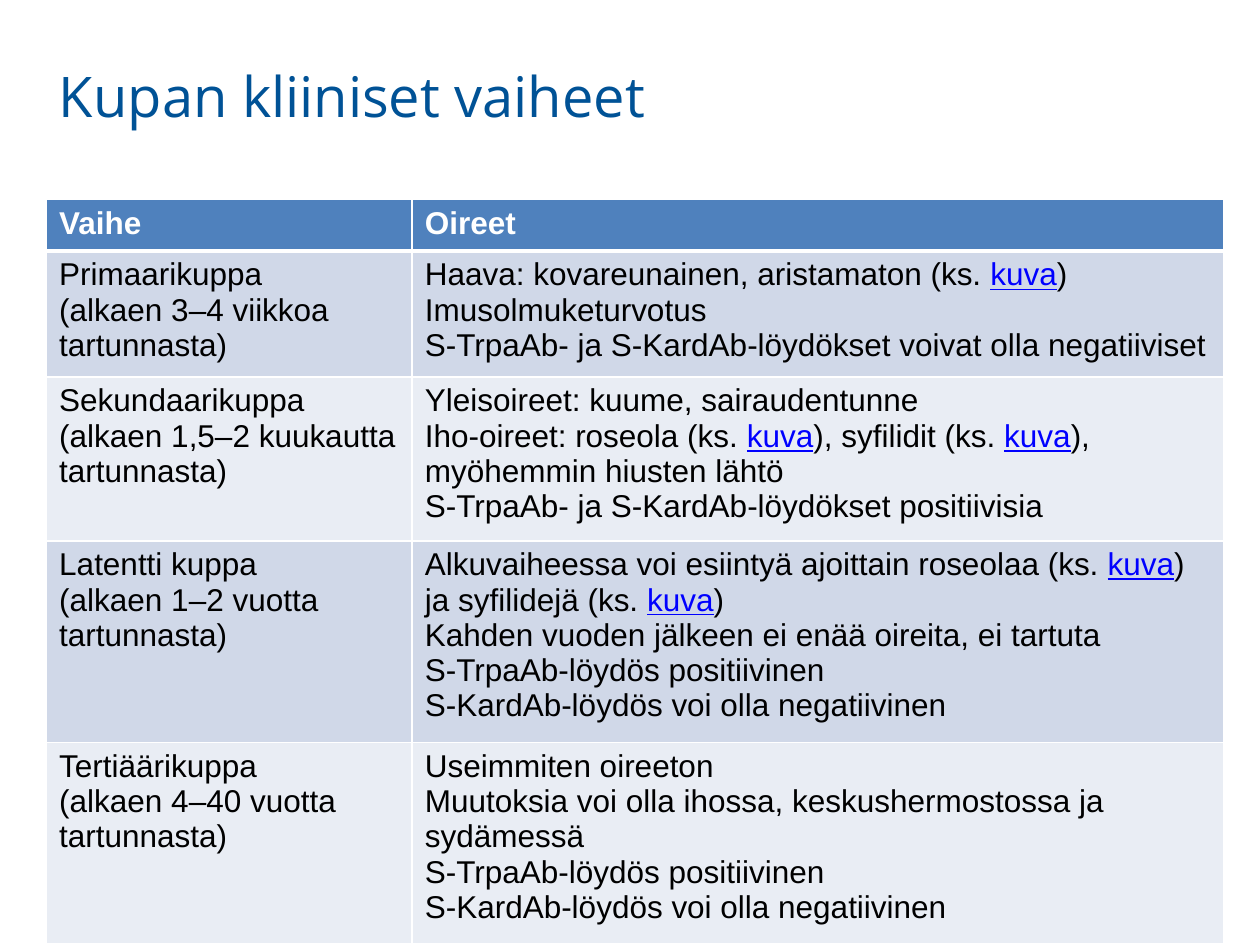
from dataclasses import dataclass

from lxml import etree
from pptx import Presentation
from pptx.dml.color import RGBColor
from pptx.enum.text import MSO_ANCHOR
from pptx.oxml.ns import qn
from pptx.table import _Cell
from pptx.text.text import TextFrame
from pptx.util import Cm, Pt

TOP = MSO_ANCHOR.TOP
LINK_MARK = "|"


@dataclass(frozen=True)
class Theme:
    title_font: str = "Open Sans"
    body_font: str = "Arial"
    title_size: int = 32
    body_size: int = 18
    title: str = "005296"
    header: str = "4F81BD"
    bands: tuple[str, str] = ("D0D8E8", "E9EDF4")
    text: str = "000000"
    link: str = "0000FF"
    white: str = "FFFFFF"
    border: int = 1
    header_border: int = 3


@dataclass(frozen=True)
class Stage:
    name: tuple[str, ...]
    symptoms: tuple[str, ...]
    lines: int


THEME = Theme()
LEFT = Cm(0.94)
COLUMN_WIDTHS = (Cm(7.37), Cm(16.36))
HEADER_HEIGHT = Cm(1.04)
LINE_HEIGHT = Cm(0.71)
CELL_PADDING = Cm(0.25)

HEADINGS = ("Vaihe", "Oireet")
STAGES = (
    Stage(
        ("Primaarikuppa\n(alkaen 3–4 viikkoa tartunnasta)",),
        (
            "Haava: kovareunainen, aristamaton (ks. |kuva|) Imusolmuketurvotus",
            "S-TrpaAb- ja S-KardAb-löydökset voivat olla negatiiviset",
        ),
        3,
    ),
    Stage(
        ("Sekundaarikuppa\n(alkaen 1,5–2 kuukautta tartunnasta)",),
        (
            "Yleisoireet: kuume, sairaudentunne",
            "Iho-oireet: roseola (ks. |kuva|), syfilidit (ks. |kuva|), myöhemmin hiusten lähtö",
            "S-TrpaAb- ja S-KardAb-löydökset positiivisia",
        ),
        4,
    ),
    Stage(
        ("Latentti kuppa", "(alkaen 1–2 vuotta tartunnasta)"),
        (
            "Alkuvaiheessa voi esiintyä ajoittain roseolaa (ks. |kuva|) ja syfilidejä (ks. |kuva|)",
            "Kahden vuoden jälkeen ei enää oireita, ei tartuta",
            "S-TrpaAb-löydös positiivinen",
            "S-KardAb-löydös voi olla negatiivinen",
        ),
        5,
    ),
    Stage(
        ("Tertiäärikuppa", "(alkaen 4–40 vuotta tartunnasta)"),
        (
            "Useimmiten oireeton",
            "Muutoksia voi olla ihossa, keskushermostossa ja sydämessä",
            "S-TrpaAb-löydös positiivinen",
            "S-KardAb-löydös voi olla negatiivinen",
        ),
        5,
    ),
)


def write_text(
    frame: TextFrame,
    paragraphs: tuple[str, ...],
    *,
    font: str = THEME.body_font,
    size: int = THEME.body_size,
    color: str = THEME.text,
    bold: bool = False,
) -> None:
    frame.word_wrap = True
    for number, text in enumerate(paragraphs):
        paragraph = frame.add_paragraph() if number else frame.paragraphs[0]
        for part_number, part in enumerate(text.split(LINK_MARK)):
            is_link = part_number % 2 == 1
            for line_number, line in enumerate(part.split("\n")):
                if line_number:
                    paragraph.add_line_break()
                run = paragraph.add_run()
                run.text = line
                run.font.name = font
                run.font.size = Pt(size)
                run.font.bold = bold
                run.font.underline = is_link
                run.font.color.rgb = RGBColor.from_string(THEME.link if is_link else color)


def format_cell(cell: _Cell, fill: str, top: int, bottom: int) -> None:
    cell.fill.solid()
    cell.fill.fore_color.rgb = RGBColor.from_string(fill)
    properties = cell._tc.get_or_add_tcPr()
    widths = {"a:lnL": THEME.border, "a:lnR": THEME.border, "a:lnT": top, "a:lnB": bottom}
    for position, (tag, width) in enumerate(widths.items()):
        line = etree.Element(qn(tag), w=str(Pt(width)))
        solid = etree.SubElement(line, qn("a:solidFill"))
        etree.SubElement(solid, qn("a:srgbClr"), val=THEME.white)
        properties.insert(position, line)


def add_title(slide, text: str) -> None:
    box = slide.shapes.add_textbox(LEFT, Cm(1.12), Cm(22.91), Cm(3.2))
    box.text_frame.vertical_anchor = TOP
    write_text(
        box.text_frame, (text,), font=THEME.title_font, size=THEME.title_size, color=THEME.title
    )


def add_stage_table(slide, stages: tuple[Stage, ...]) -> None:
    heights = [HEADER_HEIGHT] + [stage.lines * LINE_HEIGHT + CELL_PADDING for stage in stages]
    table = slide.shapes.add_table(
        len(heights), len(HEADINGS), LEFT, Cm(4.02), sum(COLUMN_WIDTHS), sum(heights)
    ).table
    for column, width in zip(table.columns, COLUMN_WIDTHS):
        column.width = width
    for row, height in zip(table.rows, heights):
        row.height = height

    for cell, heading in zip(table.rows[0].cells, HEADINGS):
        format_cell(cell, THEME.header, THEME.border, THEME.header_border)
        write_text(cell.text_frame, (heading,), color=THEME.white, bold=True)
    for number, stage in enumerate(stages):
        top = THEME.border if number else THEME.header_border
        fill = THEME.bands[number % len(THEME.bands)]
        for cell, paragraphs in zip(table.rows[number + 1].cells, (stage.name, stage.symptoms)):
            format_cell(cell, fill, top, THEME.border)
            write_text(cell.text_frame, paragraphs)


def main() -> None:
    presentation = Presentation()
    presentation.slide_width = Cm(25.4)
    presentation.slide_height = Cm(19.05)
    slide = presentation.slides.add_slide(presentation.slide_layouts[6])
    add_title(slide, "Kupan kliiniset vaiheet")
    add_stage_table(slide, STAGES)
    presentation.save("out.pptx")


if __name__ == "__main__":
    main()
